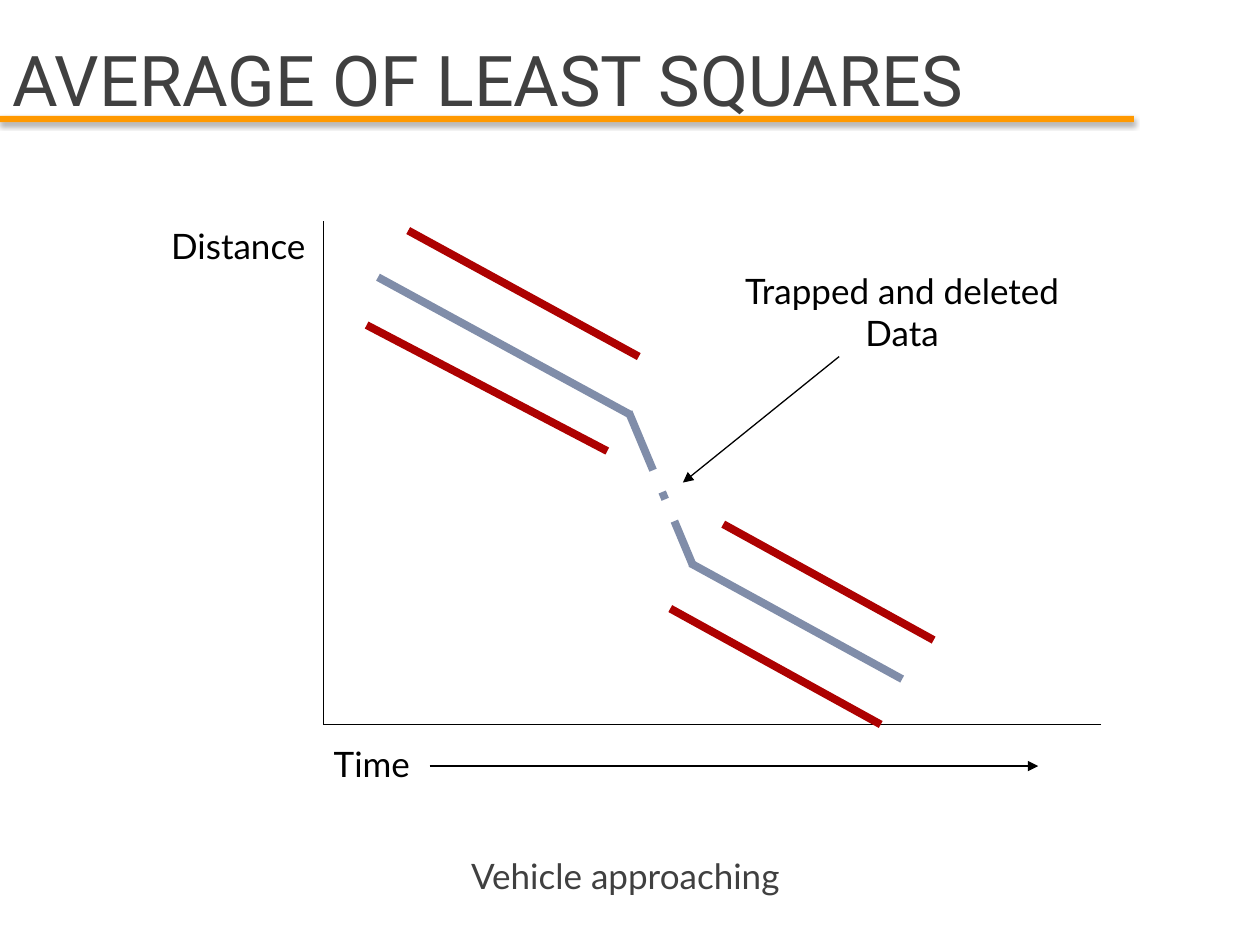
"""Build the "Average of least squares" slide with its distance-time diagram."""
import pptx
import pptx.dml.color
import pptx.enum.dml
import pptx.enum.shapes
import pptx.enum.text
import pptx.oxml
import pptx.oxml.ns
import pptx.util
from pptx.util import Inches

BLACK, GREY, BLUE, RED, ORANGE = "000000", "404040", "808DA9", "AD0101", "FF9900"
A = pptx.oxml.ns.nsdecls("a")


def rgb(value):
    return pptx.dml.color.RGBColor.from_string(value)


prs = pptx.Presentation()
prs.slide_width, prs.slide_height = Inches(10), Inches(7.5)
s = prs.slides.add_slide(prs.slide_layouts[6])

bar = s.shapes.add_shape(
    pptx.enum.shapes.MSO_SHAPE.RECTANGLE, Inches(0), Inches(0.92), Inches(9), Inches(0.05)
)
bar.fill.solid()
bar.fill.fore_color.rgb = rgb(ORANGE)
bar.line.fill.background()
bar.shadow.inherit = False
effects = bar._element.spPr.find(pptx.oxml.ns.qn("a:effectLst"))
effects.append(pptx.oxml.parse_xml(
    f'<a:outerShdw {A} blurRad="{pptx.util.Pt(3.1)}" dist="{pptx.util.Pt(1.8)}" dir="5400000" '
    'algn="ctr" rotWithShape="0"><a:srgbClr val="000000"><a:alpha val="35000"/>'
    '</a:srgbClr></a:outerShdw>'
))

thin = {"color": BLACK, "width": 0.75}
arrow = {**thin, "arrow": True}
track = {"color": BLUE, "width": 4.5}
lost = {**track, "dash": pptx.enum.dml.MSO_LINE.LONG_DASH_DOT}
limit = {"color": RED, "width": 4.5}

lines = [
    (8.74, 5.75, 2.57, 5.75, thin),
    (2.57, 5.75, 2.57, 1.75, thin),
    (3, 2.2, 5, 3.29, track),
    (3.41, 6.08, 8.24, 6.08, arrow),
    (2.91, 2.58, 4.82, 3.58, limit),
    (3.24, 1.83, 5.07, 2.83, limit),
    (4.99, 3.27, 5.5, 4.49, lost),
    (5.48, 4.47, 7.16, 5.39, track),
    (5.32, 4.83, 6.99, 5.75, limit),
    (5.74, 4.16, 7.41, 5.08, limit),
    (6.66, 2.83, 5.42, 3.83, arrow),
]
for *ends, style in lines:
    c = s.shapes.add_connector(
        pptx.enum.shapes.MSO_CONNECTOR.STRAIGHT, *[Inches(v) for v in ends]
    )
    c.line.color.rgb = rgb(style["color"])
    c.line.width = pptx.util.Pt(style["width"])
    if "dash" in style:
        c.line.dash_style = style["dash"]
    if "arrow" in style:
        c.line._get_or_add_ln().append(
            pptx.oxml.parse_xml(f'<a:tailEnd {A} type="triangle"/>')
        )
    c._element.spPr.append(pptx.oxml.parse_xml(f"<a:effectLst {A}/>"))

label = {"name": "Lato", "size": pptx.util.Pt(20)}
heading = {"name": "Roboto", "size": pptx.util.Pt(40)}
left, center = pptx.enum.text.PP_ALIGN.LEFT, pptx.enum.text.PP_ALIGN.CENTER
top, middle = pptx.enum.text.MSO_ANCHOR.TOP, pptx.enum.text.MSO_ANCHOR.MIDDLE

texts = [
    ("Distance", (1.26, 1.73, 1.29, 0.44), label, BLACK, left, top, False),
    ("Time", (2.55, 5.84, 0.82, 0.44), label, BLACK, left, top, False),
    ("Vehicle approaching", (3.64, 6.73, 2.72, 0.44), label, GREY, left, top, True),
    ("Trapped and deleted\nData", (5.77, 2.09, 2.78, 0.77), label, BLACK, center, top, False),
    ("AVERAGE OF LEAST SQUARES", (0, 0.33, 9, 0.58), heading, GREY, left, middle, True),
]
for text, box, font, color, align, anchor, wrap in texts:
    tf = s.shapes.add_textbox(*[Inches(v) for v in box]).text_frame
    tf.word_wrap = wrap
    tf.vertical_anchor = anchor
    tf.text = text
    for p in tf.paragraphs:
        p.alignment = align
        for r in p.runs:
            r.font.color.rgb = rgb(color)
            for key, value in font.items():
                setattr(r.font, key, value)

prs.save("out.pptx")
